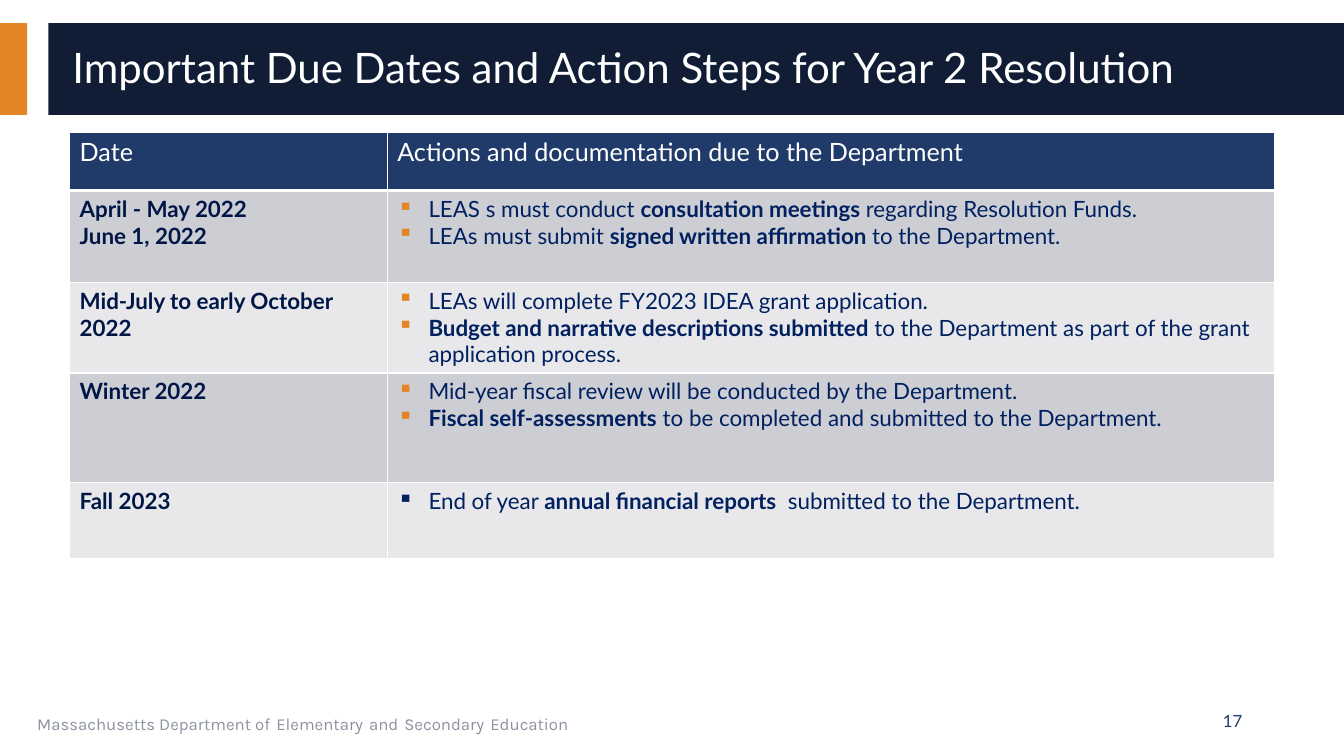
import pptx
import pptx.dml.color
import pptx.enum.shapes
import pptx.enum.text
import pptx.oxml
import pptx.oxml.ns
import pptx.util

Inches = pptx.util.Inches
Pt = pptx.util.Pt
ALIGN = pptx.enum.text.PP_ALIGN
ANCHOR = pptx.enum.text.MSO_ANCHOR

COLORS = {
    "orange": "E38526",
    "banner": "101D35",
    "blue": "203B6A",
    "date": "001746",
    "action": "002060",
    "footer": "8D92A1",
    "band_dark": "CDCED4",
    "band_light": "E8E8EB",
    "white": "FFFFFF",
}

COLUMN_WIDTHS = [3.15, 8.8]
HEADER_HEIGHT = 0.58
HEADINGS = ["Date", "Actions and documentation due to the Department"]

# Height, dates, bullet colour, actions; ** encloses bold words.
DUE_DATES = [
    (0.91, ["April - May 2022", "June 1, 2022"], "orange",
     ["LEAS s must conduct **consultation meetings **regarding Resolution Funds.",
      "LEAs must submit **signed written affirmation **to the Department."]),
    (0.69, ["Mid-July to early October 2022"], "orange",
     ["LEAs will complete FY2023 IDEA grant application.",
      "**Budget and narrative descriptions submitted **to the Department "
      "as part of the grant application process."]),
    (1.09, ["Winter 2022"], "orange",
     ["Mid-year fiscal review will be conducted by the Department. ",
      "**Fiscal self-assessments** to be completed and submitted to the Department."]),
    (0.75, ["Fall 2023"], "action",
     ["End of year **annual financial reports**  submitted to the Department."]),
]


def rgb(name):
    return pptx.dml.color.RGBColor.from_string(COLORS[name])


def add_run(paragraph, text, size, color, bold=False, font="Lato"):
    run = paragraph.add_run()
    run.text = text
    run.font.name = font
    run.font.size = Pt(size)
    run.font.bold = bold
    run.font.color.rgb = rgb(color)


def add_bar(slide, left, width, color):
    bar = slide.shapes.add_shape(
        pptx.enum.shapes.MSO_SHAPE.RECTANGLE,
        Inches(left), Inches(0.23), Inches(width), Inches(0.91))
    bar.shadow.inherit = False
    bar.fill.solid()
    bar.fill.fore_color.rgb = rgb(color)
    bar.line.fill.background()


def add_text_line(slide, left, top, width, height,
                  anchor=ANCHOR.MIDDLE, align=ALIGN.LEFT):
    """Add an empty text box and return its paragraph."""
    frame = slide.shapes.add_textbox(
        Inches(left), Inches(top), Inches(width), Inches(height)).text_frame
    frame.word_wrap = True
    frame.vertical_anchor = anchor
    paragraph = frame.paragraphs[0]
    paragraph.alignment = align
    return paragraph


def add_footer(slide):
    line = add_text_line(slide, 0.27, 6.95, 8.44, 0.4, ANCHOR.TOP)
    phrases = ["Massachusetts Department of", "Elementary", "and",
               "Secondary", "Education"]
    for index, phrase in enumerate(phrases):
        if index:
            add_run(line, " ", 18, "blue", font="Karla")
        add_run(line, phrase, 12, "footer", font="Karla")


def add_bullet(paragraph, color):
    properties = paragraph._p.get_or_add_pPr()
    properties.set("marL", str(Inches(0.31)))
    properties.set("indent", str(Inches(-0.31)))
    namespace = pptx.oxml.ns.nsdecls("a")
    properties.append(pptx.oxml.parse_xml(
        f'<a:buClr {namespace}><a:srgbClr val="{COLORS[color]}"/></a:buClr>'))
    properties.append(pptx.oxml.parse_xml(f'<a:buChar {namespace} char="▪"/>'))


def style_cell(cell, fill, bottom_width=1):
    properties = cell._tc.get_or_add_tcPr()
    for side, width in zip("LRTB", [1, 1, 1, bottom_width]):
        properties.append(pptx.oxml.parse_xml(
            f'<a:ln{side} {pptx.oxml.ns.nsdecls("a")} w="{Pt(width)}"><a:solidFill>'
            f'<a:srgbClr val="{COLORS["white"]}"/></a:solidFill></a:ln{side}>'))
    cell.fill.solid()
    cell.fill.fore_color.rgb = rgb(fill)


def cell_paragraphs(cell, texts):
    """Yield one paragraph of the cell with each text."""
    frame = cell.text_frame
    for index, text in enumerate(texts):
        yield (frame.add_paragraph() if index else frame.paragraphs[0]), text


def add_due_dates(slide):
    heights = [HEADER_HEIGHT] + [height for height, *_ in DUE_DATES]
    table = slide.shapes.add_table(
        len(heights), len(COLUMN_WIDTHS), Inches(0.69), Inches(1.31),
        Inches(sum(COLUMN_WIDTHS)), Inches(sum(heights))).table
    for column, width in zip(table.columns, COLUMN_WIDTHS):
        column.width = Inches(width)
    for row, height in zip(table.rows, heights):
        row.height = Inches(height)

    for index, heading in enumerate(HEADINGS):
        cell = table.cell(0, index)
        style_cell(cell, "blue", bottom_width=3)
        add_run(cell.text_frame.paragraphs[0], heading, 18, "white")

    for row, (_, dates, bullet_color, actions) in enumerate(DUE_DATES, 1):
        date_cell, action_cell = table.cell(row, 0), table.cell(row, 1)
        for cell in (date_cell, action_cell):
            style_cell(cell, "band_dark" if row % 2 else "band_light")
        for paragraph, date in cell_paragraphs(date_cell, dates):
            add_run(paragraph, date, 16, "date", bold=True)
        for paragraph, action in cell_paragraphs(action_cell, actions):
            add_bullet(paragraph, bullet_color)
            for index, part in enumerate(action.split("**")):
                if part:
                    add_run(paragraph, part, 16, "action", bold=index % 2 == 1)


def main():
    deck = pptx.Presentation()
    deck.slide_width = Inches(13.33)
    deck.slide_height = Inches(7.5)
    slide = deck.slides.add_slide(deck.slide_layouts[6])

    add_bar(slide, 0, 0.27, "orange")
    add_bar(slide, 0.48, 12.85, "banner")
    add_footer(slide)
    title = add_text_line(slide, 0.62, 0.32, 12.44, 0.74)
    title.line_spacing = 0.9
    add_run(title, "Important Due Dates and Action Steps for Year 2 Resolution",
            30, "white")
    add_due_dates(slide)
    page_number = add_text_line(slide, 9.42, 6.95, 3, 0.4, align=ALIGN.RIGHT)
    add_run(page_number, "17", 12, "blue")

    deck.save("out.pptx")


if __name__ == "__main__":
    main()
